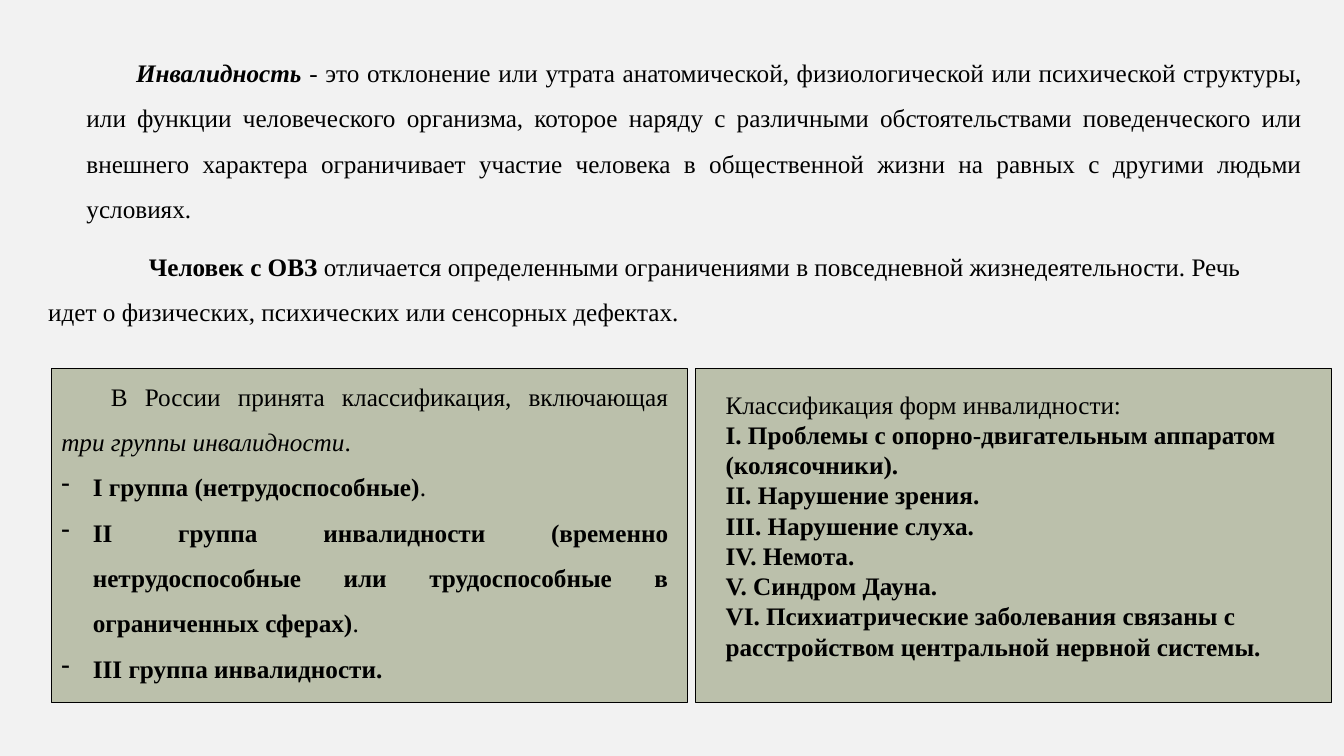
from lxml import etree
from pptx import Presentation
from pptx import util as u
from pptx.dml.color import RGBColor
from pptx.enum import shapes, text
from pptx.oxml.ns import qn

JUSTIFIED = text.PP_ALIGN.JUSTIFY


def color(hex_code):
    return RGBColor.from_string(hex_code)


def format_paragraph(paragraph, runs, font, align=text.PP_ALIGN.LEFT,
                     spacing=1.0, margin=0, indent=0, bullet=None):
    """Fill a paragraph from (text, style) runs; style may hold "b" and "i"."""
    paragraph.alignment = align
    paragraph.line_spacing = spacing
    properties = paragraph._p.get_or_add_pPr()
    properties.set("marL", str(u.Pt(margin)))
    properties.set("indent", str(u.Pt(indent)))
    if bullet:
        etree.SubElement(properties, qn("a:buChar")).set("char", bullet)
    for words, style in runs:
        run = paragraph.add_run()
        run.text = words
        run.font.name, run.font.size = font, u.Pt(18)
        run.font.color.rgb = color("000000")
        run.font.bold = "b" in style
        run.font.italic = "i" in style


class SlideBuilder:
    font = "Times New Roman"
    panel_colors = ("BBC0AB", "B9BEA8")

    def __init__(self, slide):
        self.slide = slide

    def background(self, hex_code):
        fill = self.slide.background.fill
        fill.solid()
        fill.fore_color.rgb = color(hex_code)

    def panel(self, *box):
        shape = self.slide.shapes.add_shape(
            shapes.MSO_SHAPE.RECTANGLE, *map(u.Pt, box))
        shape.shadow.inherit = False
        shape.fill.gradient()
        shape.fill.gradient_angle = 270
        for stop, hex_code in zip(shape.fill.gradient_stops, self.panel_colors):
            stop.color.rgb = color(hex_code)
        shape.line.color.rgb = color("000000")
        shape.line.width = u.Pt(0.5)

    def text_box(self, box, paragraphs):
        """Add a text box from (runs, format) pairs, one per paragraph."""
        frame = self.slide.shapes.add_textbox(*map(u.Pt, box)).text_frame
        frame.word_wrap = True
        frame.auto_size = text.MSO_AUTO_SIZE.SHAPE_TO_FIT_TEXT
        for number, (runs, options) in enumerate(paragraphs):
            paragraph = frame.add_paragraph() if number else frame.paragraphs[0]
            format_paragraph(paragraph, runs, self.font, **options)


def main():
    presentation = Presentation()
    presentation.slide_width, presentation.slide_height = u.Pt(960), u.Pt(540)
    builder = SlideBuilder(
        presentation.slides.add_slide(presentation.slide_layouts[6]))
    builder.background("F2F2F2")

    for left in (496.8, 36.72):
        builder.panel(left, 262.8, 454.32, 239.04)

    opening = dict(align=JUSTIFIED, spacing=1.5, indent=35.4)
    builder.text_box((54.72, 26.64, 882.72, 138.24), [([
        ("Инвалидность", "bi"),
        (" - это отклонение или утрата анатомической, физиологической или "
         "психической структуры, или функции человеческого организма, которое "
         "наряду с различными обстоятельствами поведенческого или внешнего "
         "характера ограничивает участие человека в общественной жизни на "
         "равных с другими людьми условиях.", ""),
    ], opening)])

    builder.text_box((27.36, 164.88, 882.72, 72.72), [([
        ("Человек с ОВЗ ", "b"),
        ("отличается определенными ограничениями в повседневной "
         "жизнедеятельности. Речь идет о физических, психических или "
         "сенсорных дефектах.", ""),
    ], dict(spacing=1.5, indent=72))])

    group = dict(align=JUSTIFIED, spacing=1.5, margin=22.5, indent=-22.5,
                 bullet="-")
    builder.text_box((36.72, 257.76, 447.84, 236.16), [
        ([("В России принята классификация, включающая ", ""),
          ("три группы инвалидности", "i"), (".", "")], opening),
        ([("I группа (нетрудоспособные)", "b"), (".", "")], group),
        ([("II группа инвалидности (временно нетрудоспособные или "
           "трудоспособные в ограниченных сферах)", "b"), (".", "")], group),
        ([("III группа инвалидности.", "b")], group),
    ])

    forms = [
        "I. Проблемы с опорно-двигательным аппаратом (колясочники).",
        "II. Нарушение зрения.",
        "III. Нарушение слуха.",
        "IV. Немота.",
        "V. Cиндром Дауна.",
        "VI. Психиатрические заболевания связаны с расстройством центральной "
        "нервной системы.",
    ]
    builder.text_box(
        (511.2, 274.32, 439.92, 203.76),
        [([("Классификация форм инвалидности:", "")], {})]
        + [([(form, "b")], {}) for form in forms])

    presentation.save("out.pptx")


if __name__ == "__main__":
    main()
